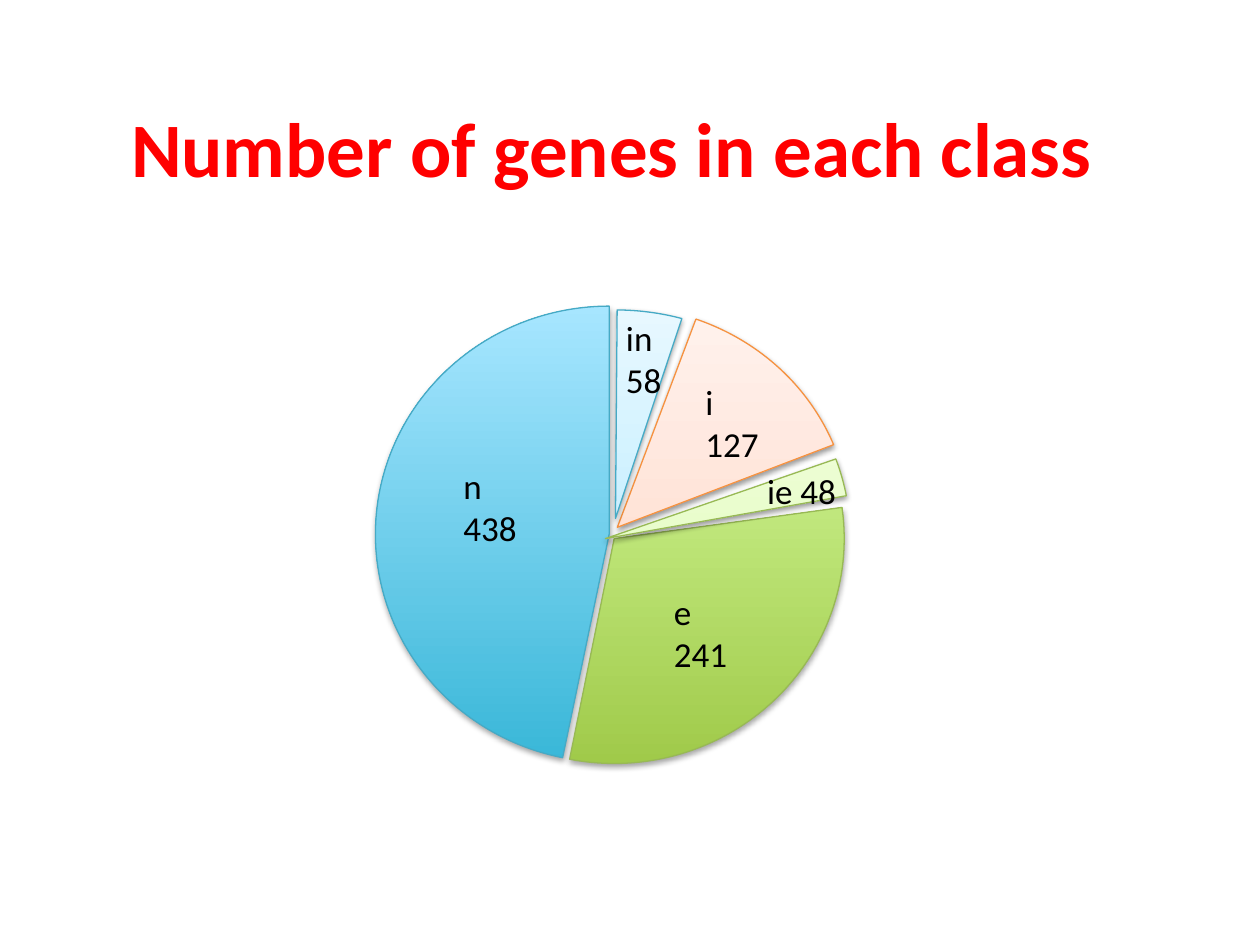
from copy import deepcopy
from dataclasses import dataclass

from lxml import etree
from pptx import Presentation
from pptx.dml.color import RGBColor
from pptx.enum.shapes import MSO_SHAPE
from pptx.enum.text import MSO_ANCHOR, MSO_AUTO_SIZE, PP_ALIGN
from pptx.oxml.ns import qn
from pptx.shapes.autoshape import Shape
from pptx.shapes.shapetree import GroupShapes
from pptx.util import Inches, Pt

PIE = MSO_SHAPE.PIE
LEFT = PP_ALIGN.LEFT
TOP = MSO_ANCHOR.TOP
FIT = MSO_AUTO_SIZE.SHAPE_TO_FIT_TEXT

Box = tuple[float, float, float, float]
Stops = tuple[tuple[float, str], ...]


@dataclass(frozen=True)
class Shade:
    """Opacity in percent and offset in points."""
    alpha: int
    dist: float


@dataclass(frozen=True)
class Theme:
    font: str = "Calibri"
    title_size: int = 44
    label_size: int = 20
    title: str = "FF0000"
    text: str = "000000"
    shade: str = "000000"
    blur: float = 3.15
    edge: float = 0.75
    blue_edge: str = "46AAC5"
    green_edge: str = "98B955"
    peach_edge: str = "F69240"
    blue: Stops = ((0, "39B7D8"), (1, "A7E6FF"))
    green: Stops = ((0, "A0CA4A"), (1, "DAFFA5"))
    peach: Stops = ((0, "FFD2BD"), (0.35, "FFDED0"), (1, "FFF2ED"))
    lime: Stops = ((0, "DAFDA7"), (0.35, "E4FCC2"), (1, "F5FFE7"))
    sky: Stops = ((0, "A7E6FF"), (0.35, "C1EDFF"), (1, "E7F8FF"))
    strong: Shade = Shade(35, 1.81)
    soft: Shade = Shade(38, 1.57)


@dataclass(frozen=True)
class Slice:
    """Angles run clockwise in degrees from three o'clock."""
    box: Box
    start: float
    end: float
    stops: Stops
    edge: str
    shade: Shade


@dataclass(frozen=True)
class Label:
    box: Box
    lines: tuple[str, ...]
    wrap: bool = True


THEME = Theme()

SLICES = (
    Slice((2.98, 2.43, 3.71, 3.62), 101.77, 270, THEME.blue, THEME.blue_edge, THEME.strong),
    Slice((3.05, 2.49, 3.65, 3.57), 352.21, 101.43, THEME.green, THEME.green_edge, THEME.strong),
    Slice((3.05, 2.43, 3.7, 3.51), 290.68, 339.1, THEME.peach, THEME.peach_edge, THEME.soft),
    Slice((2.86, 2.42, 3.89, 3.71), 340.93, 349.91, THEME.lime, THEME.green_edge, THEME.soft),
    Slice((3.03, 2.46, 3.71, 3.31), 270.47, 288.37, THEME.sky, THEME.blue_edge, THEME.soft),
)

LABELS = (
    Label((3.58, 3.64, 0.63, 0.77), ("n", "438"), wrap=False),
    Label((5.25, 4.64, 1.25, 0.77), ("e", "241")),
    Label((5.5, 2.97, 1, 0.77), ("i", "127")),
    Label((5.99, 3.68, 1.17, 0.44), ("ie 48",)),
    Label((4.87, 2.46, 0.67, 0.77), ("in", "58")),
)


def place(shape: Shape, box: Box) -> None:
    shape.left, shape.top, shape.width, shape.height = map(Inches, box)


def write(shape: Shape, lines: tuple[str, ...], size: int, color: str,
          bold: bool = False, wrap: bool = True) -> None:
    frame = shape.text_frame
    frame.text = "\n".join(lines)
    frame.word_wrap = wrap
    frame.auto_size = FIT
    frame.vertical_anchor = TOP
    for para in frame.paragraphs:
        para.alignment = LEFT
        para.font.name = THEME.font
        para.font.size = Pt(size)
        para.font.bold = bold
        para.font.color.rgb = RGBColor.from_string(color)


def blend(shape: Shape, stops: Stops) -> None:
    """Fill upward with the given gradient stops."""
    fill = shape.fill
    fill.gradient()
    fill.gradient_angle = 90
    items = shape._element.spPr.find(".//" + qn("a:gsLst"))
    for _ in stops[len(items):]:
        items.append(deepcopy(items[-1]))
    for stop, (pos, color) in zip(fill.gradient_stops, stops):
        stop.position = pos
        stop.color.rgb = RGBColor.from_string(color)


def cast(shape: Shape, shade: Shade) -> None:
    """Drop a shadow straight down."""
    shape.shadow.inherit = False
    effects = shape._element.spPr.find(qn("a:effectLst"))
    outer = etree.SubElement(effects, qn("a:outerShdw"), blurRad=str(Pt(THEME.blur)),
                             dist=str(Pt(shade.dist)), dir="5400000", rotWithShape="0")
    color = etree.SubElement(outer, qn("a:srgbClr"), val=THEME.shade)
    etree.SubElement(color, qn("a:alpha"), val=str(shade.alpha * 1000))


def add_slice(shapes: GroupShapes, part: Slice) -> None:
    shape = shapes.add_shape(PIE, *map(Inches, part.box))
    # Adjustments count 0.6 to the degree
    shape.adjustments[0] = part.start * 0.6
    shape.adjustments[1] = part.end * 0.6
    blend(shape, part.stops)
    shape.line.color.rgb = RGBColor.from_string(part.edge)
    shape.line.width = Pt(THEME.edge)
    cast(shape, part.shade)


def add_label(shapes: GroupShapes, label: Label) -> None:
    shape = shapes.add_textbox(*map(Inches, label.box))
    write(shape, label.lines, THEME.label_size, THEME.text, wrap=label.wrap)


def main() -> None:
    deck = Presentation()
    deck.slide_width, deck.slide_height = Inches(10), Inches(7.5)
    slide = deck.slides.add_slide(deck.slide_layouts[5])

    # Title
    title = slide.shapes.title
    place(title, (0.94, 0.75, 7.9, 0.84))
    write(title, ("Number of genes in each class",), THEME.title_size,
          THEME.title, bold=True, wrap=False)

    # Pie slices, then their labels
    pie = slide.shapes.add_group_shape().shapes
    for part in SLICES:
        add_slice(pie, part)
    for label in LABELS:
        add_label(pie, label)

    deck.save("out.pptx")


if __name__ == "__main__":
    main()
